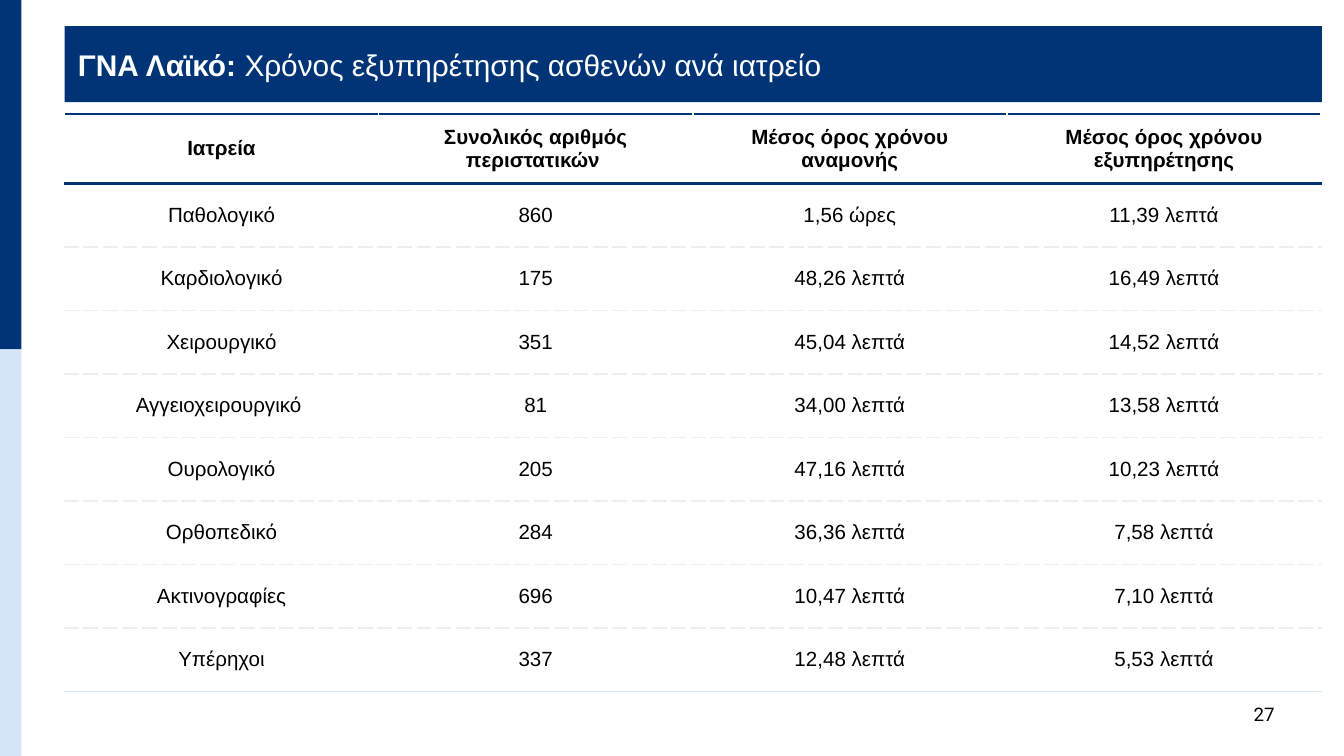
from lxml import etree
from pptx import Presentation
from pptx.dml.color import RGBColor
from pptx.enum import shapes, text
from pptx.oxml import ns
from pptx.util import Pt

PX = 4572
THEME = {
    "navy": "013476", "pale": "D3E5F6", "white": "FFFFFF",
    "black": "000000", "rule": "EEEEEE",
    "font": "Arial", "page_font": "Roboto",
    "title": 16, "cell": 11, "page": 10,
}
HEAD = ["Ιατρεία", "Συνολικός αριθμός περιστατικών ",
        "Μέσος όρος χρόνου αναμονής", "Μέσος όρος χρόνου εξυπηρέτησης"]
ROWS = [
    ["Παθολογικό", "860", "1,56 ώρες", "11,39 λεπτά"],
    ["Καρδιολογικό", "175", "48,26 λεπτά", "16,49 λεπτά"],
    ["Χειρουργικό", "351", "45,04 λεπτά", "14,52 λεπτά"],
    ["Αγγειοχειρουργικό ", "81", "34,00 λεπτά", "13,58 λεπτά"],
    ["Ουρολογικό", "205", "47,16 λεπτά", "10,23 λεπτά"],
    ["Ορθοπεδικό", "284", "36,36 λεπτά", "7,58 λεπτά"],
    ["Ακτινογραφίες", "696", "10,47 λεπτά", "7,10 λεπτά"],
    ["Υπέρηχοι", "337", "12,48 λεπτά", "5,53 λεπτά"],
]


def px(*vals):
    return [val * PX for val in vals]


def apply(item, vals):
    for key, val in vals.items():
        setattr(item, key, val)


def color(name):
    return RGBColor.from_string(THEME[name])


def paint(item, name):
    item.fill.solid()
    item.fill.fore_color.rgb = color(name)


def ink(font, size, tint, bold=False, face="font"):
    apply(font, {"name": THEME[face], "size": Pt(THEME[size]), "bold": bold})
    font.color.rgb = color(tint)


def pad(item, side, end):
    apply(item, {"margin_left": side * PX, "margin_right": side * PX,
                 "margin_top": end * PX, "margin_bottom": end * PX,
                 "vertical_anchor": text.MSO_ANCHOR.MIDDLE})


def edge(cell, side, tint, width, dash="solid"):
    line = etree.SubElement(cell._tc.get_or_add_tcPr(), ns.qn(f"a:ln{side}"),
                            w=str(int(Pt(width))))
    fill = etree.SubElement(line, ns.qn("a:solidFill"))
    etree.SubElement(fill, ns.qn("a:srgbClr"), val=THEME[tint])
    etree.SubElement(line, ns.qn("a:prstDash"), val=dash)


def side_bar(slide, left, top, width, height):
    split = 520
    parts = [("navy", top, split), ("pale", top + split, height - split)]
    for tint, start, size in parts:
        bar = slide.shapes.add_shape(shapes.MSO_SHAPE.RECTANGLE,
                                     *px(left, start, width, size))
        paint(bar, tint)
        bar.line.fill.background()
        bar.shadow.inherit = False


def title_bar(slide, left, top, width, height):
    title = slide.shapes.title
    apply(title, dict(zip(("left", "top", "width", "height"),
                          px(left, top, width, height))))
    paint(title, "navy")
    frame = title.text_frame
    pad(frame, 20, 20)
    apply(frame, {"word_wrap": True, "auto_size": text.MSO_AUTO_SIZE.NONE})
    para = frame.paragraphs[0]
    para.alignment = text.PP_ALIGN.LEFT
    for words, bold in [("ΓΝΑ Λαϊκό: ", True),
                        ("Χρόνος εξυπηρέτησης ασθενών ανά ιατρείο", False)]:
        run = para.add_run()
        run.text = words
        ink(run.font, "title", "white", bold)


def fill_cell(cell, words, row, last):
    cell.text = words
    pad(cell, 15, 8)
    para = cell.text_frame.paragraphs[0]
    para.alignment = text.PP_ALIGN.CENTER
    ink(para.runs[0].font, "cell", "black", row == 0)
    strong, soft = ("navy", 1.5), ("rule", 1, "dash")
    edge(cell, "L", "white", 1)
    edge(cell, "R", "white", 1)
    edge(cell, "T", *(strong if row < 2 else soft))
    base = strong if row == 0 else ("pale", 0.25) if row == last else soft
    edge(cell, "B", *base)
    paint(cell, "white")


def clinic_table(slide, left, top, width, height):
    data = [HEAD] + ROWS
    head = 103
    grid = slide.shapes.add_table(len(data), len(HEAD),
                                  *px(left, top, width, height)).table
    apply(grid, {"first_row": True, "horz_banding": False})
    for col in grid.columns:
        col.width = width * PX // len(HEAD)
    for row, names in enumerate(data):
        grid.rows[row].height = (head * PX if row == 0
                                 else (height - head) * PX // len(ROWS))
        for col, words in enumerate(names):
            fill_cell(grid.cell(row, col), words, row, len(ROWS))


def page_mark(slide, left, top, width, height):
    frame = slide.shapes.add_textbox(*px(left, top, width, height)).text_frame
    pad(frame, 20, 20)
    frame.word_wrap = True
    run = frame.paragraphs[0].add_run()
    run.text = "27"
    ink(run.font, "page", "black", face="page_font")


def main():
    deck = Presentation()
    apply(deck, {"slide_width": 2000 * PX, "slide_height": 1125 * PX})
    slide = deck.slides.add_slide(deck.slide_layouts.get_by_name("Title Only"))
    side_bar(slide, 0, 0, 32, 1125)
    page_mark(slide, 1846, 1035, 114, 56)
    title_bar(slide, 96, 39, 1871, 113)
    clinic_table(slide, 96, 170, 1870, 859)
    deck.save("out.pptx")


if __name__ == "__main__":
    main()
